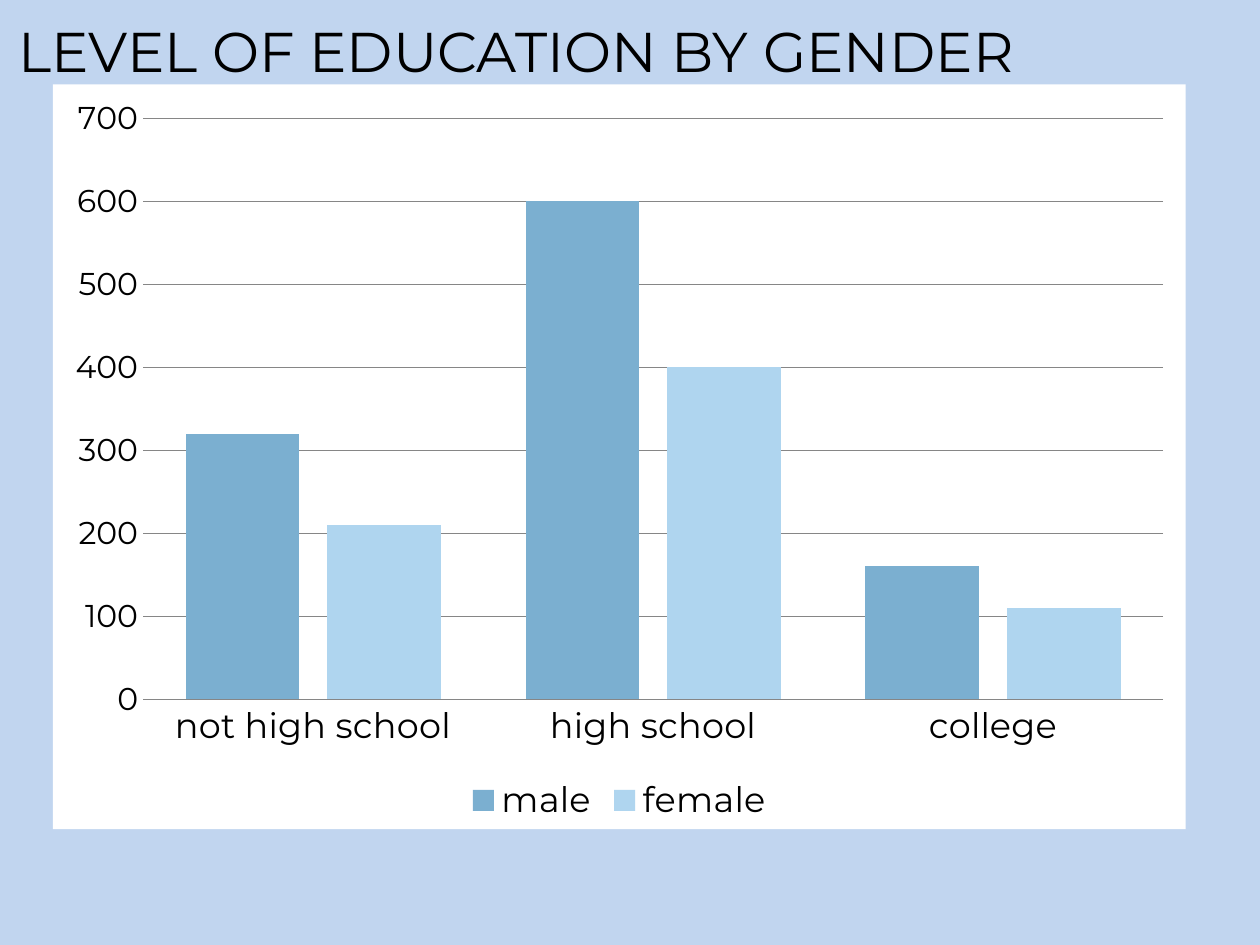
from pptx import Presentation
from pptx.chart.data import CategoryChartData
from pptx.dml.color import RGBColor
from pptx.enum.chart import XL_CHART_TYPE, XL_LEGEND_POSITION, XL_TICK_MARK
from pptx.enum.text import MSO_ANCHOR, PP_ALIGN
from pptx.oxml import parse_xml
from pptx.oxml.ns import nsdecls
from pptx.util import Inches, Pt

COLUMN = XL_CHART_TYPE.COLUMN_CLUSTERED
BOTTOM = XL_LEGEND_POSITION.BOTTOM
NO_TICK = XL_TICK_MARK.NONE
TOP = MSO_ANCHOR.TOP
LEFT = PP_ALIGN.LEFT

FACE = "Montserrat"
BLACK, GREY, WHITE, SKY = "000000", "868686", "FFFFFF", "C1D5EF"
LEVELS = ["not high school", "high school", "college"]
COUNTS = [
    ("male", (320, 600, 160), "7BAFD0"),
    ("female", (210, 400, 110), "AFD5EF"),
]


def paint(color, code):
    """Set a colour format from a hex string."""
    color.rgb = RGBColor.from_string(code)


def fill(target, code):
    """Give a fill one solid colour."""
    target.solid()
    paint(target.fore_color, code)


def style(font, size):
    """Set the face, size and colour of a font."""
    font.name, font.size, font.bold = FACE, Pt(size), False
    paint(font.color, BLACK)


def rule(line):
    """Make a thin grey line."""
    paint(line.color, GREY)
    line.width = Pt(0.75)


def add_title(slide, text):
    """Place and fill the title."""
    title = slide.shapes.title
    title.left, title.top = Inches(0.05), Inches(0.08)
    title.width, title.height = Inches(9.08), Inches(0.75)
    frame = title.text_frame
    frame.word_wrap = True
    frame.vertical_anchor = TOP
    para = frame.paragraphs[0]
    para.alignment = LEFT
    run = para.add_run()
    run.text = text
    style(run.font, 32)


def style_axes(chart):
    """Format both axes and the grid."""
    for axis, size in ((chart.category_axis, 20), (chart.value_axis, 18)):
        axis.major_tick_mark = axis.minor_tick_mark = NO_TICK
        style(axis.tick_labels.font, size)
    rule(chart.category_axis.format.line)
    scale = chart.value_axis
    scale.minimum_scale, scale.maximum_scale = 0, 700
    scale.major_unit = 100
    scale.format.line.fill.background()
    scale.has_major_gridlines = True
    rule(scale.major_gridlines.format.line)


def style_bars(plot):
    """Space and colour the columns."""
    plot.gap_width, plot.overlap = 75, -25
    plot.vary_by_categories = False
    for series, (_, _, code) in zip(plot.series, COUNTS):
        fill(series.format.fill, code)


def add_legend(chart):
    """Show the legend below the plot."""
    chart.has_legend = True
    chart.legend.position = BOTTOM
    chart.legend.include_in_layout = False
    style(chart.legend.font, 20)


def back_chart(chart, code):
    """Put a plain fill behind the chart."""
    area = parse_xml(
        f'<c:spPr {nsdecls("c", "a")}><a:solidFill><a:srgbClr val="{code}"/>'
        "</a:solidFill><a:ln><a:noFill/></a:ln></c:spPr>"
    )
    chart.element.chart.addnext(area)


def add_bars(slide):
    """Add the column chart."""
    data = CategoryChartData()
    data.categories = LEVELS
    for name, values, _ in COUNTS:
        data.add_series(name, values)
    chart = slide.shapes.add_chart(
        COLUMN, Inches(0.42), Inches(0.67), Inches(8.99), Inches(5.91), data
    ).chart
    style(chart.font, 10)
    chart.has_title = False
    style_axes(chart)
    style_bars(chart.plots[0])
    add_legend(chart)
    back_chart(chart, WHITE)


def main():
    """Build and save the slide."""
    deck = Presentation()
    deck.slide_width, deck.slide_height = Inches(10), Inches(7.5)
    slide = deck.slides.add_slide(deck.slide_layouts[5])
    fill(slide.background.fill, SKY)
    add_title(slide, "LEVEL OF EDUCATION BY GENDER")
    add_bars(slide)
    deck.save("out.pptx")


if __name__ == "__main__":
    main()
